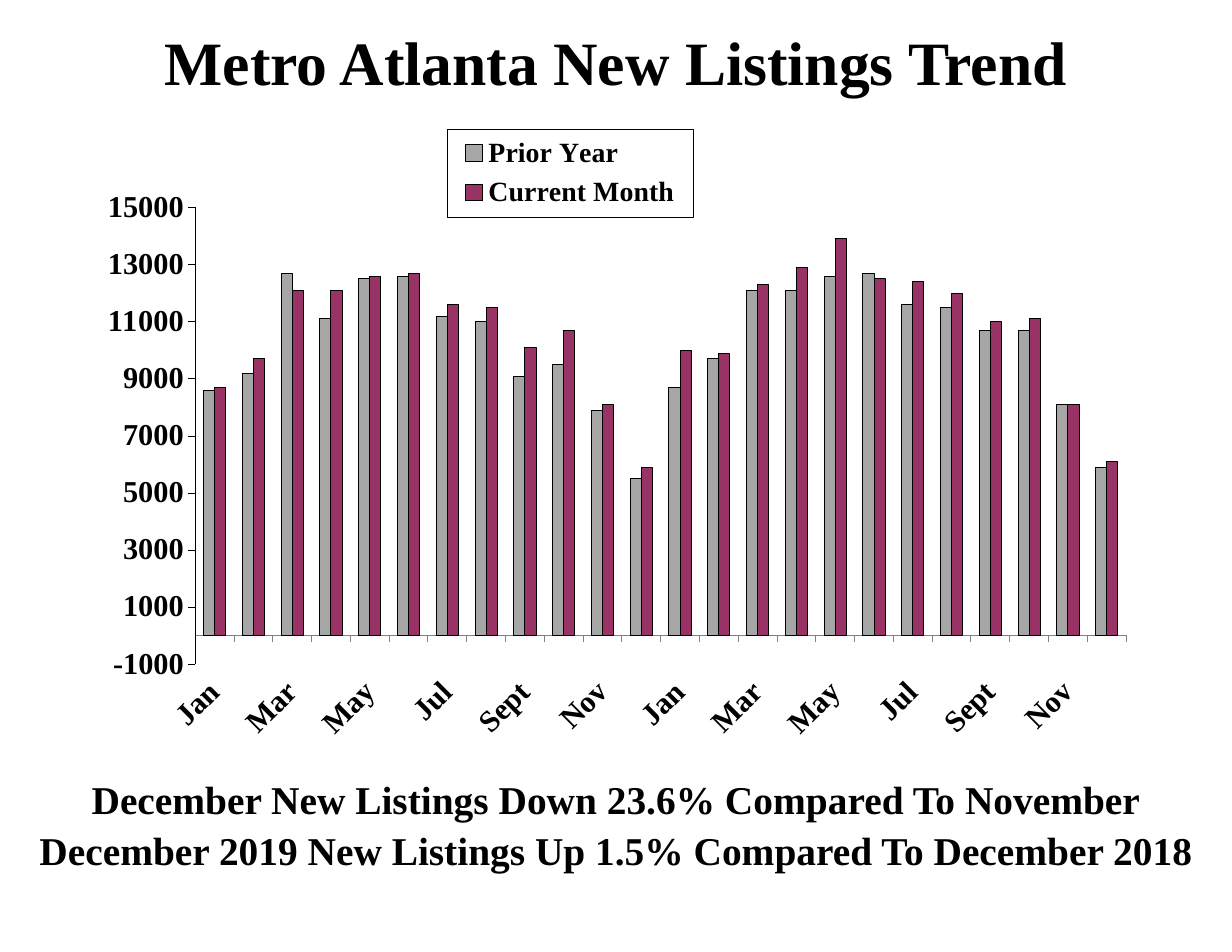
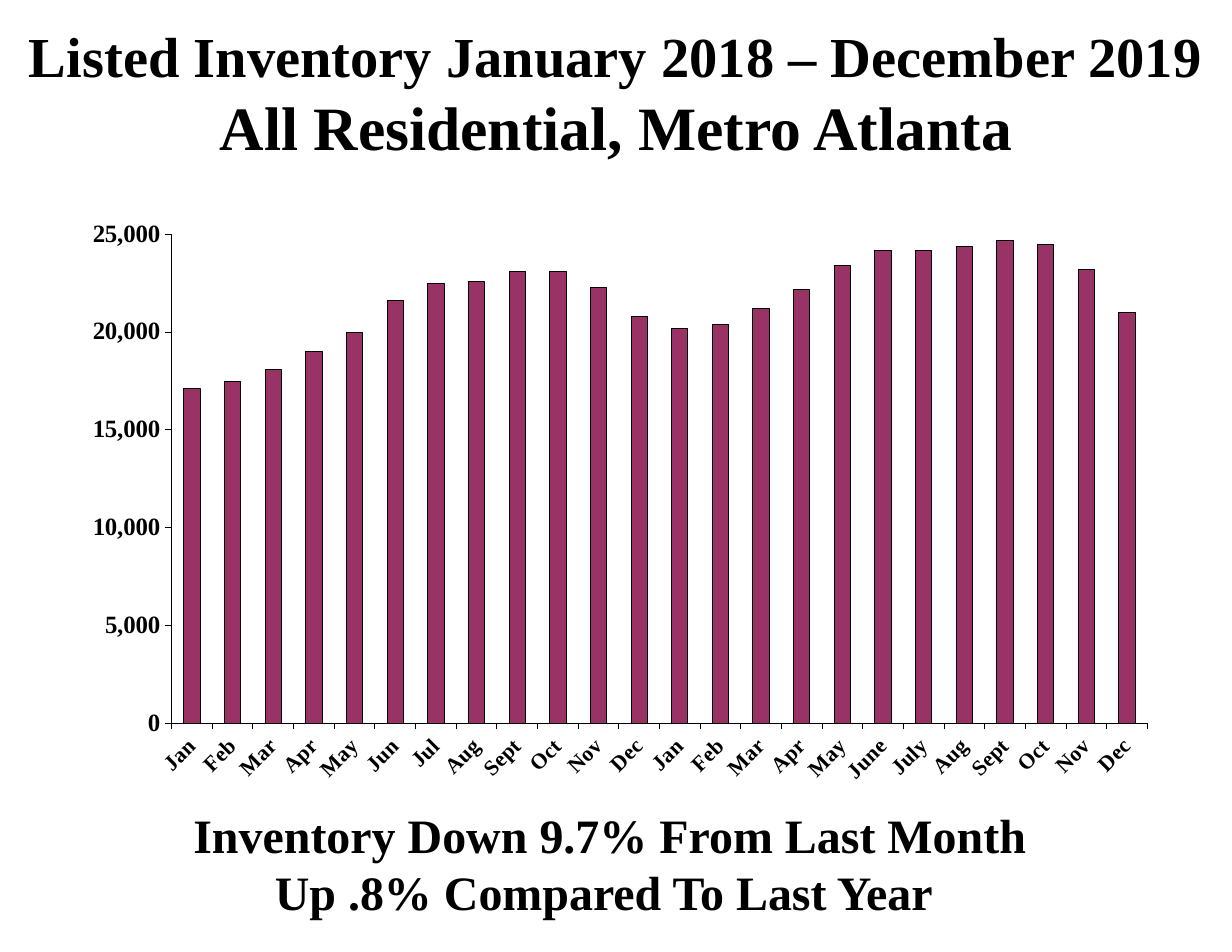
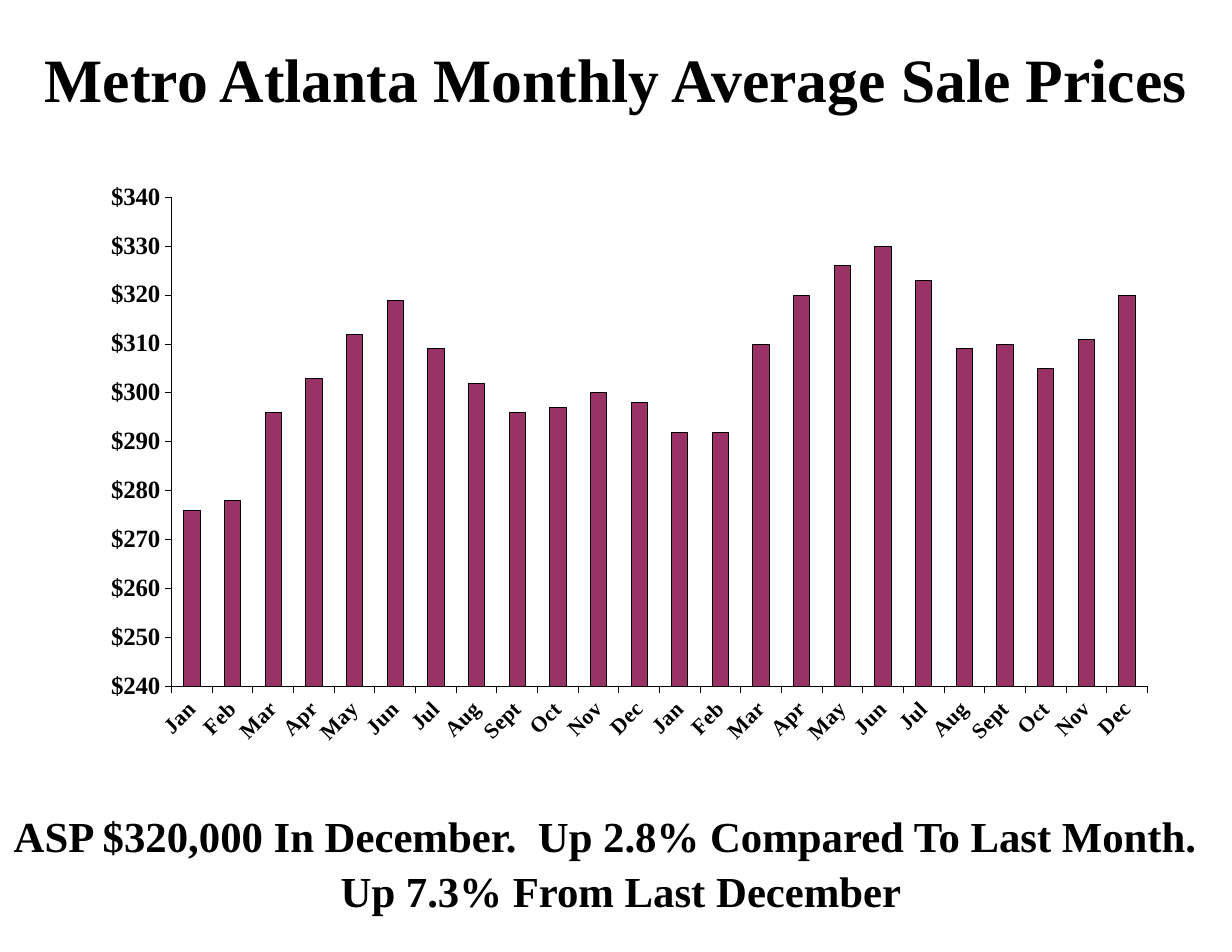
from lxml import etree
from pptx import Presentation
from pptx.chart.data import CategoryChartData
from pptx.dml.color import RGBColor
from pptx.enum.chart import XL_CHART_TYPE, XL_LEGEND_POSITION, XL_TICK_LABEL_POSITION, XL_TICK_MARK
from pptx.enum.text import MSO_ANCHOR, MSO_AUTO_SIZE, PP_ALIGN
from pptx.oxml import parse_xml
from pptx.oxml.ns import nsdecls, qn
from pptx.util import Pt

COLUMNS = XL_CHART_TYPE.COLUMN_CLUSTERED
LEGEND_RIGHT = XL_LEGEND_POSITION.RIGHT
LABELS_LOW = XL_TICK_LABEL_POSITION.LOW
TICK_OUT, TICK_NONE = XL_TICK_MARK.OUTSIDE, XL_TICK_MARK.NONE
MIDDLE, TOP = MSO_ANCHOR.MIDDLE, MSO_ANCHOR.TOP
NO_FIT = MSO_AUTO_SIZE.NONE
CENTER = PP_ALIGN.CENTER

EMU_PER_PX = 914400 / 112
WIDTH, HEIGHT = 1232, 952
FONT = "Times New Roman"
BLACK, WHITE, GREY, SILVER, PLUM = "000000", "FFFFFF", "808080", "A6A6A6", "993366"
HAIRLINE = Pt(0.05)

MONTHS = ["Jan", "Feb", "Mar", "Apr", "May", "Jun",
          "Jul", "Aug", "Sept", "Oct", "Nov", "Dec"]
TWO_YEARS = MONTHS * 2
INVENTORY_MONTHS = MONTHS + MONTHS[:5] + ["June", "July"] + MONTHS[7:]

PRIOR_YEAR = [8600, 9200, 12700, 11100, 12500, 12600, 11200, 11000, 9100, 9500, 7900, 5500,
              8700, 9700, 12100, 12100, 12600, 12700, 11600, 11500, 10700, 10700, 8100, 5900]
CURRENT_MONTH = [8700, 9700, 12100, 12100, 12600, 12700, 11600, 11500, 10100, 10700, 8100, 5900,
                 10000, 9900, 12300, 12900, 13900, 12500, 12400, 12000, 11000, 11100, 8100, 6100]
INVENTORY = [17100, 17500, 18100, 19000, 20000, 21600, 22500, 22600, 23100, 23100, 22300, 20800,
             20200, 20400, 21200, 22200, 23400, 24200, 24200, 24400, 24700, 24500, 23200, 21000]
SALE_PRICES = [276, 278, 296, 303, 312, 319, 309, 302, 296, 297, 300, 298,
               292, 292, 310, 320, 326, 330, 323, 309, 310, 305, 311, 320]


def px(n):
    return round(n * EMU_PER_PX)


def rgb(value):
    return RGBColor.from_string(value)


def manual_layout(x, y, w, h, inner=False):
    layout = parse_xml(f"<c:layout {nsdecls('c')}><c:manualLayout/></c:layout>")
    parts = [("layoutTarget", "inner")] if inner else []
    parts += [("xMode", "edge"), ("yMode", "edge"), ("x", x), ("y", y), ("w", w), ("h", h)]
    for tag, value in parts:
        etree.SubElement(layout[0], qn("c:" + tag)).set("val", str(value))
    return layout


def drop_layout(element):
    for old in element.findall(qn("c:layout")):
        element.remove(old)


class Deck:
    def __init__(self):
        self.prs = Presentation()
        self.prs.slide_width, self.prs.slide_height = px(WIDTH), px(HEIGHT)
        self.slide = None

    def add_slide(self):
        self.slide = self.prs.slides.add_slide(self.prs.slide_layouts[1])
        fill = self.slide.background.fill
        fill.solid()
        fill.fore_color.rgb = rgb(WHITE)

    def style(self, font, size):
        font.name, font.size, font.bold = FONT, Pt(size), True
        font.color.rgb = rgb(BLACK)

    def frame(self, sp, top, height, anchor):
        sp.left, sp.top, sp.width, sp.height = 0, px(top), px(WIDTH), px(height)
        tf = sp.text_frame
        tf.word_wrap, tf.auto_size, tf.vertical_anchor = True, NO_FIT, anchor
        tf.margin_left = tf.margin_right = tf.margin_top = tf.margin_bottom = 0
        return tf

    def paragraph(self, tf, index, text, size):
        p = tf.add_paragraph() if index else tf.paragraphs[0]
        p.alignment = CENTER
        p.space_before = Pt(0)
        r = p.add_run()
        r.text = text
        self.style(r.font, size)
        return p

    def title(self, top, height, *lines):
        tf = self.frame(self.slide.shapes.title, top, height, MIDDLE)
        for i, (text, size) in enumerate(lines):
            self.paragraph(tf, i, text, size)

    def summary(self, top, height, inset, size, pitch, *lines):
        tf = self.frame(self.slide.placeholders[1], top, height, TOP)
        tf.margin_top = px(inset)
        for i, (text, shift) in enumerate(lines):
            p = self.paragraph(tf, i, text, size)
            p.line_spacing = Pt(pitch)
            pPr = p._p.get_or_add_pPr()
            pPr.set("marL", str(px(max(2 * shift, 0))))
            pPr.set("marR", str(px(max(-2 * shift, 0))))
            pPr.set("indent", "0")
            etree.SubElement(pPr, qn("a:buNone"))

    def axis(self, axis, size, line):
        axis.has_major_gridlines = False
        axis.major_tick_mark, axis.minor_tick_mark = TICK_OUT, TICK_NONE
        axis.format.line.color.rgb = rgb(line)
        axis.format.line.width = HAIRLINE
        self.style(axis.tick_labels.font, size)

    def column_chart(self, box, plot_box, months, series, scale, sizes,
                     number_format="General", month_line=BLACK):
        data = CategoryChartData()
        data.categories = months
        for name, values, _ in series:
            data.add_series(name, values)
        chart = self.slide.shapes.add_chart(COLUMNS, *map(px, box), data).chart
        chart.has_title = chart.has_legend = False
        self.style(chart.font, sizes[0])
        plot = chart.plots[0]
        plot.gap_width, plot.overlap, plot.vary_by_categories = 150, 0, False
        for ser, (_, _, color) in zip(plot.series, series):
            ser.format.fill.solid()
            ser.format.fill.fore_color.rgb = rgb(color)
            ser.format.line.color.rgb = rgb(BLACK)
            ser.format.line.width = HAIRLINE
        value_axis, month_axis = chart.value_axis, chart.category_axis
        self.axis(value_axis, sizes[0], BLACK)
        self.axis(month_axis, sizes[1], month_line)
        value_axis.minimum_scale, value_axis.maximum_scale, value_axis.major_unit = scale
        value_axis.tick_labels.number_format = number_format
        value_axis.tick_labels.number_format_is_linked = False
        month_axis.tick_label_position = LABELS_LOW
        month_axis._element.find(qn("c:txPr")).find(qn("a:bodyPr")).set("rot", "-2700000")
        area = chart._chartSpace.chart.plotArea
        drop_layout(area)
        area.insert(0, manual_layout(*plot_box, inner=True))
        return chart

    def legend(self, chart, box, size):
        chart.has_legend = True
        legend = chart.legend
        legend.position = LEGEND_RIGHT
        legend.include_in_layout = False
        self.style(legend.font, size)
        element = legend._element
        drop_layout(element)
        element.find(qn("c:legendPos")).addnext(manual_layout(*box))
        element.find(qn("c:txPr")).addprevious(parse_xml(
            f'<c:spPr {nsdecls("c", "a")}><a:noFill/><a:ln w="{HAIRLINE}"><a:solidFill>'
            f'<a:srgbClr val="{BLACK}"/></a:solidFill></a:ln></c:spPr>'))


def main():
    deck = Deck()
    single_plot = (0.107, 0.088, 0.876, 0.717)

    deck.add_slide()
    deck.title(35, 52, ("Metro Atlanta New Listings Trend", 39.6))
    chart = deck.column_chart(
        (76, 116, 1080, 651), (0.11, 0.14, 0.862, 0.702), TWO_YEARS,
        [("Prior Year", PRIOR_YEAR, SILVER), ("Current Month", CURRENT_MONTH, PLUM)],
        (-1000, 15000, 2000), (19.5, 19.5), month_line=GREY)
    deck.legend(chart, (0.344, 0.02, 0.227, 0.135), 17.9)
    deck.summary(753, 130, 18, 25.3, 32.8,
                 ("December New Listings Down 23.6% Compared To November", 0),
                 ("December 2019 New Listings Up 1.5% Compared To December 2018", 0))

    deck.add_slide()
    deck.title(25, 133, ("Listed Inventory January 2018 – December 2019", 36.3),
               ("All Residential, Metro Atlanta", 39.6))
    deck.column_chart((52, 174, 1114, 682), single_plot, INVENTORY_MONTHS,
                      [("Series 1", INVENTORY, PLUM)], (0, 25000, 5000), (16, 14), "#,##0")
    deck.summary(794, 130, 12, 30.8, 36.6,
                 ("Inventory Down 9.7% From Last Month", -6),
                 ("Up .8% Compared To Last Year", -12))

    deck.add_slide()
    deck.title(52, 52, ("Metro Atlanta Monthly Average Sale Prices", 39.6))
    deck.column_chart((52, 137, 1114, 682), single_plot, TWO_YEARS,
                      [("Series 1", SALE_PRICES, PLUM)], (240, 340, 10), (16, 14), '"$"#,##0')
    deck.summary(794, 130, 12, 27.5, 35.4,
                 ("ASP $320,000 In December.  Up 2.8% Compared To Last Month.", -11),
                 ("Up 7.3% From Last December", 5))

    deck.prs.save("out.pptx")


if __name__ == "__main__":
    main()
